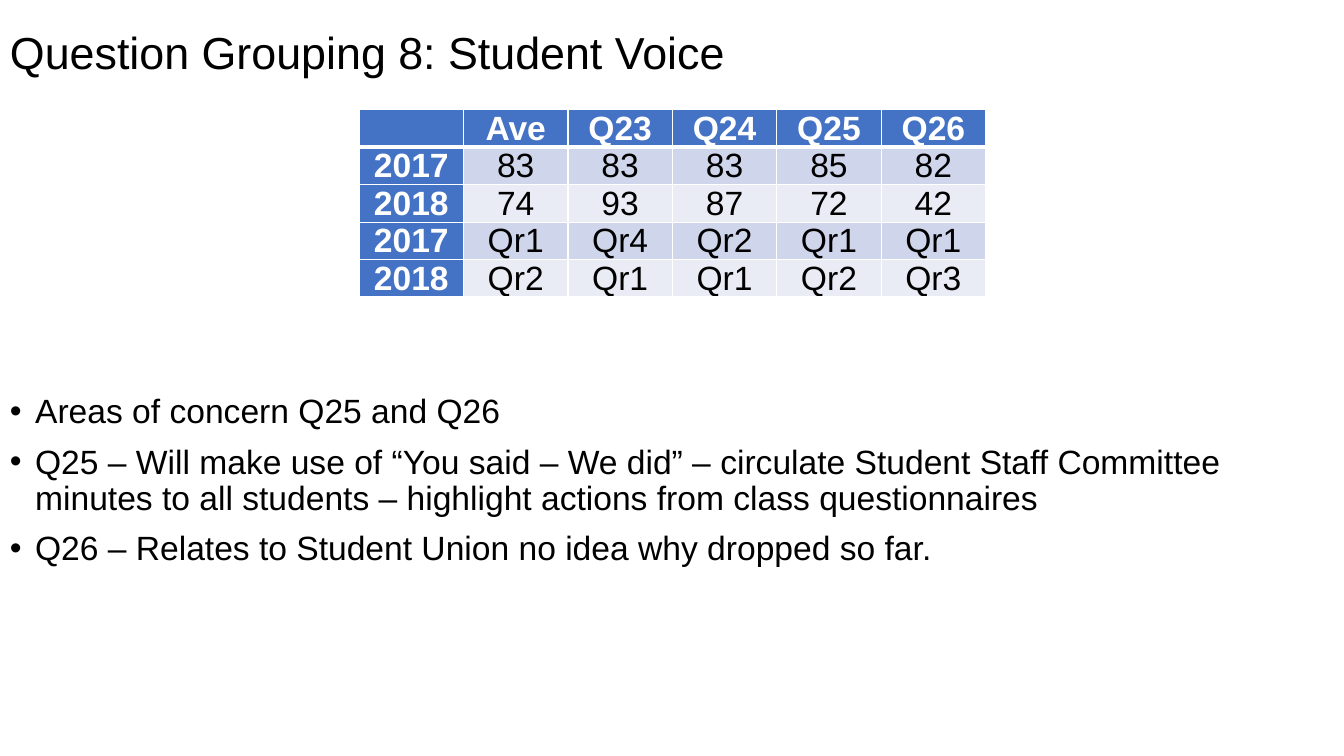
import pptx
import pptx.util
import pptx.dml.color
import pptx.enum.text
from lxml import etree
from pptx.oxml.ns import qn

Pt = pptx.util.Pt
RGB = pptx.dml.color.RGBColor
Anchor = pptx.enum.text.MSO_ANCHOR
Align = pptx.enum.text.PP_ALIGN

TITLE = "Question Grouping 8: Student Voice"
SCORES = [
    ("", "Ave", "Q23", "Q24", "Q25", "Q26"),
    ("2017", "83", "83", "83", "85", "82"),
    ("2018", "74", "93", "87", "72", "42"),
    ("2017", "Qr1", "Qr4", "Qr2", "Qr1", "Qr1"),
    ("2018", "Qr2", "Qr1", "Qr1", "Qr2", "Qr3"),
]
NOTES = [
    "Areas of concern Q25 and Q26",
    "Q25 – Will make use of “You said – We did” – circulate Student Staff "
    "Committee minutes to all students – highlight actions from class questionnaires",
    "Q26 – Relates to Student Union no idea why dropped so far.",
]

BLACK = RGB(0x00, 0x00, 0x00)
WHITE = RGB(0xFF, 0xFF, 0xFF)
BLUE = RGB(0x44, 0x72, 0xC4)
BANDS = [RGB(0xE9, 0xEB, 0xF5), RGB(0xCF, 0xD5, 0xEA)]

WIDE, HIGH = 960, 540
HEAD = 78.5
BODY_TOP, BODY_HIGH, NOTES_DROP = 87.84, 436.3, 194.2
GRID_LEFT, GRID_TOP, COL, ROW = 256.5, 78.5, 74.6, 26.75
INDENT = 18


def put(item, values):
    """Set each attribute named in values on item."""
    for name, value in values.items():
        setattr(item, name, value)


def write(para, text, size, color=BLACK, bold=False, **layout):
    para.text = text
    put(para, layout)
    put(para.font, {"name": "Arial", "size": Pt(size), "bold": bold})
    para.font.color.rgb = color


def add_box(slide, top, high, **layout):
    frame = slide.shapes.add_textbox(Pt(0), Pt(top), Pt(WIDE), Pt(high)).text_frame
    put(frame, {"word_wrap": True, **layout})
    return frame


def add_bullet(para):
    props = para._p.get_or_add_pPr()
    props.set("marL", str(Pt(INDENT)))
    props.set("indent", str(-Pt(INDENT)))
    etree.SubElement(props, qn("a:buFont")).set("typeface", "Arial")
    etree.SubElement(props, qn("a:buChar")).set("char", "•")


def add_edges(cell, heavy):
    """Draw white cell borders; heavy names the sides that are 3 pt wide."""
    props = cell._tc.get_or_add_tcPr()
    for spot, side in enumerate("LRTB"):
        line = etree.Element(qn("a:ln" + side), w=str(Pt(3 if side in heavy else 1)))
        fill = etree.SubElement(line, qn("a:solidFill"))
        etree.SubElement(fill, qn("a:srgbClr")).set("val", str(WHITE))
        props.insert(spot, line)


def add_scores(slide):
    rows, cols = len(SCORES), len(SCORES[0])
    table = slide.shapes.add_table(
        rows, cols, Pt(GRID_LEFT), Pt(GRID_TOP), Pt(COL * cols), Pt(ROW * rows)
    ).table
    table.first_col = True
    for col in table.columns:
        col.width = Pt(COL)
    for r, values in enumerate(SCORES):
        table.rows[r].height = Pt(ROW)
        for c, text in enumerate(values):
            cell = table.cell(r, c)
            label = r == 0 or c == 0
            put(cell, {
                "margin_left": Pt(5), "margin_right": Pt(5),
                "margin_top": 0, "margin_bottom": 0,
                "vertical_anchor": Anchor.BOTTOM,
            })
            cell.fill.solid()
            cell.fill.fore_color.rgb = BLUE if label else BANDS[r % 2]
            write(cell.text_frame.paragraphs[0], text, 24 if text else 18,
                  WHITE if label else BLACK, label,
                  alignment=Align.CENTER, line_spacing=0.92)
            add_edges(cell, {0: "B", 1: "T"}.get(r, ""))


def main():
    deck = pptx.Presentation()
    put(deck, {"slide_width": Pt(WIDE), "slide_height": Pt(HIGH)})
    slide = deck.slides.add_slide(deck.slide_layouts[6])

    title = add_box(slide, 0, HEAD, vertical_anchor=Anchor.MIDDLE)
    write(title.paragraphs[0], TITLE, 32, line_spacing=0.9)

    body = add_box(slide, BODY_TOP, BODY_HIGH, margin_top=Pt(NOTES_DROP))
    for i, note in enumerate(NOTES):
        para = body.add_paragraph() if i else body.paragraphs[0]
        write(para, note, 24, line_spacing=0.9, space_before=Pt(10))
        add_bullet(para)

    add_scores(slide)
    deck.save("out.pptx")


if __name__ == "__main__":
    main()
